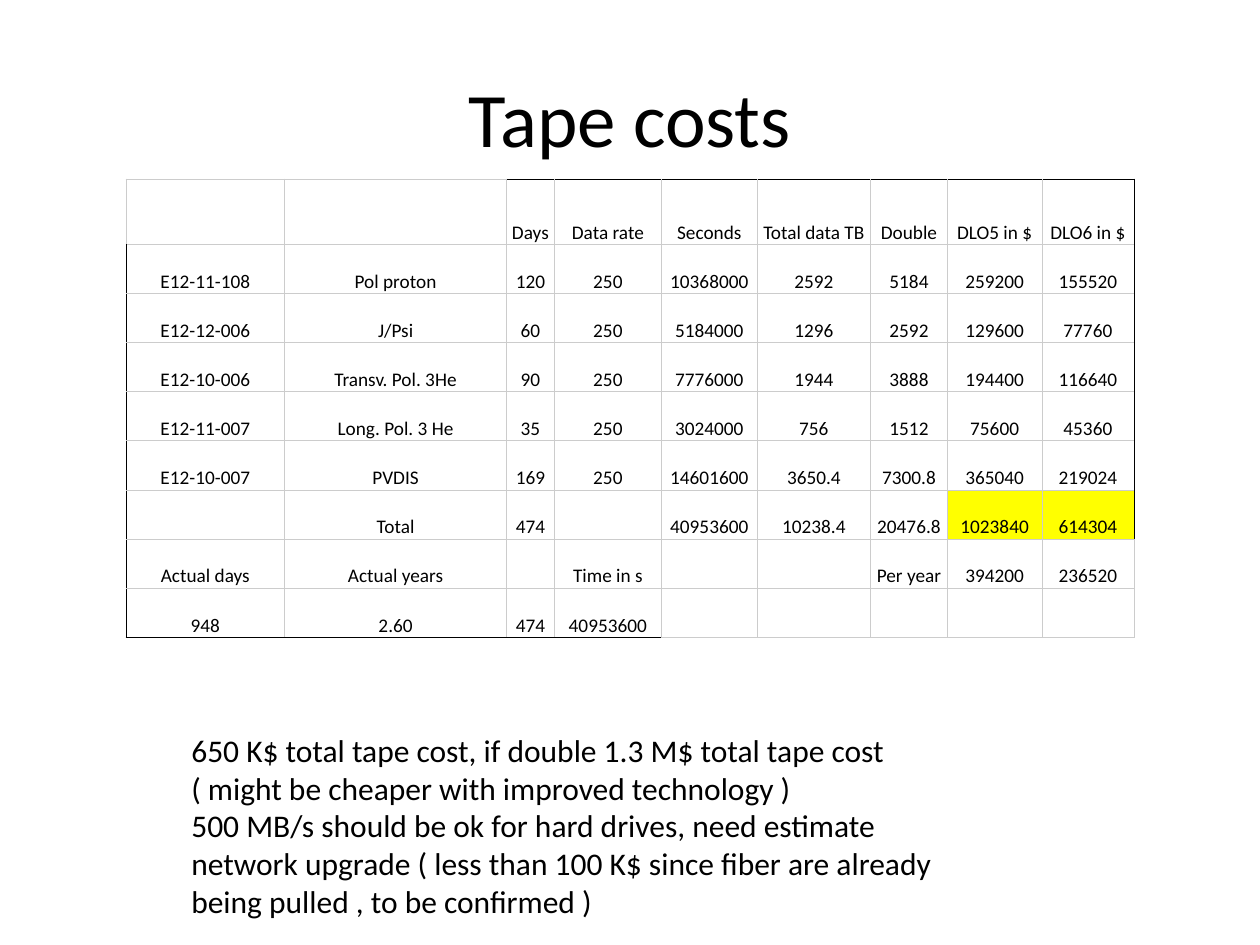
from dataclasses import dataclass

from lxml.etree import SubElement
from pptx import Presentation
from pptx.dml.color import RGBColor as RGB
from pptx.enum.text import MSO_ANCHOR as Anchor, MSO_AUTO_SIZE as Fit, PP_ALIGN as Align
from pptx.oxml.ns import qn
from pptx.util import Inches, Pt


@dataclass(frozen=True)
class Theme:
    font: str = "Calibri"
    ink: str = "000000"
    grid: str = "CCCCCC"
    mark: str = "FFFF00"
    title: int = 44
    cell: int = 11
    note: int = 18
    rule: float = 0.5


THEME = Theme()

WIDTHS = [1.26, 1.76, 0.38, 0.85, 0.76, 0.9, 0.61, 0.75, 0.73]
HEAD_ROW, BODY_ROW = 0.52, 0.39
COSTS = [
    ["", "", "Days", "Data rate", "Seconds", "Total data TB", "Double", "DLO5 in $", "DLO6 in $"],
    ["E12-11-108", "Pol proton", "120", "250", "10368000", "2592", "5184", "259200", "155520"],
    ["E12-12-006", "J/Psi", "60", "250", "5184000", "1296", "2592", "129600", "77760"],
    ["E12-10-006", "Transv. Pol. 3He", "90", "250", "7776000", "1944", "3888", "194400", "116640"],
    ["E12-11-007", "Long. Pol. 3 He", "35", "250", "3024000", "756", "1512", "75600", "45360"],
    ["E12-10-007", "PVDIS", "169", "250", "14601600", "3650.4", "7300.8", "365040", "219024"],
    ["", "Total", "474", "", "40953600", "10238.4", "20476.8", "1023840", "614304"],
    ["Actual days", "Actual years", "", "Time in s", "", "", "Per year", "394200", "236520"],
    ["948", "2.60", "474", "40953600", "", "", "", "", ""],
]
TOTAL = 6
MARKED = {(TOTAL, 7), (TOTAL, 8)}
NOTES = [
    "650 K$ total tape cost, if double 1.3 M$ total tape cost",
    "( might be cheaper with improved technology )",
    "500 MB/s should be ok for hard drives, need estimate network upgrade "
    "( less than 100 K$ since fiber are already being pulled , to be confirmed )",
]


def add_run(para, text, size):
    run = para.add_run()
    run.text = text
    run.font.name = THEME.font
    run.font.size = Pt(size)
    run.font.color.rgb = RGB.from_string(THEME.ink)


def add_title(slide, box, text):
    title = slide.shapes.title
    title.left, title.top, title.width, title.height = map(Inches, box)
    frame = title.text_frame
    frame.vertical_anchor = Anchor.MIDDLE
    para = frame.paragraphs[0]
    para.alignment = Align.CENTER
    add_run(para, text, THEME.title)


def draw_edges(cell, row, col):
    """Grey on all sides, black along the outer edge of the filled area."""
    dark = {
        "lnL": col == 0 and row > 0,
        "lnR": col == len(WIDTHS) - 1 and row <= TOTAL,
        "lnT": row == 0 and col > 1,
        "lnB": row == len(COSTS) - 1 and col < 4,
    }
    props = cell._tc.get_or_add_tcPr()
    for side, black in dark.items():
        line = SubElement(props, qn(f"a:{side}"), w=str(Pt(THEME.rule)))
        fill = SubElement(line, qn("a:solidFill"))
        SubElement(fill, qn("a:srgbClr"), val=THEME.ink if black else THEME.grid)


def fill_cell(cell, row, col, text):
    cell.margin_left = cell.margin_right = Inches(0.01)
    cell.margin_top = cell.margin_bottom = 0
    cell.vertical_anchor = Anchor.BOTTOM
    draw_edges(cell, row, col)
    if (row, col) in MARKED:
        cell.fill.solid()
        cell.fill.fore_color.rgb = RGB.from_string(THEME.mark)
    else:
        cell.fill.background()
    para = cell.text_frame.paragraphs[0]
    para.alignment = Align.CENTER
    para.font.size = Pt(THEME.cell)
    if text:
        add_run(para, text, THEME.cell)


def add_costs(slide, box):
    frame = slide.shapes.add_table(len(COSTS), len(WIDTHS), *map(Inches, box))
    table = frame.table
    table.first_row = table.horz_banding = False
    for col, width in zip(table.columns, WIDTHS):
        col.width = Inches(width)
    for row, line in enumerate(COSTS):
        table.rows[row].height = Inches(BODY_ROW if row else HEAD_ROW)
        for col, text in enumerate(line):
            fill_cell(table.cell(row, col), row, col, text)


def add_notes(slide, box):
    frame = slide.shapes.add_textbox(*map(Inches, box)).text_frame
    frame.word_wrap = True
    frame.auto_size = Fit.SHAPE_TO_FIT_TEXT
    for idx, text in enumerate(NOTES):
        para = frame.add_paragraph() if idx else frame.paragraphs[0]
        add_run(para, text, THEME.note)


def main():
    deck = Presentation()
    deck.slide_width, deck.slide_height = Inches(10), Inches(7.5)
    slide = deck.slides.add_slide(deck.slide_layouts[5])
    add_title(slide, (0.5, 0.3, 9, 1.25), "Tape costs")
    add_costs(slide, (1, 1.42, sum(WIDTHS), HEAD_ROW + BODY_ROW * (len(COSTS) - 1)))
    add_notes(slide, (1.42, 5.75, 6.42, 1.62))
    deck.save("out.pptx")


if __name__ == "__main__":
    main()
